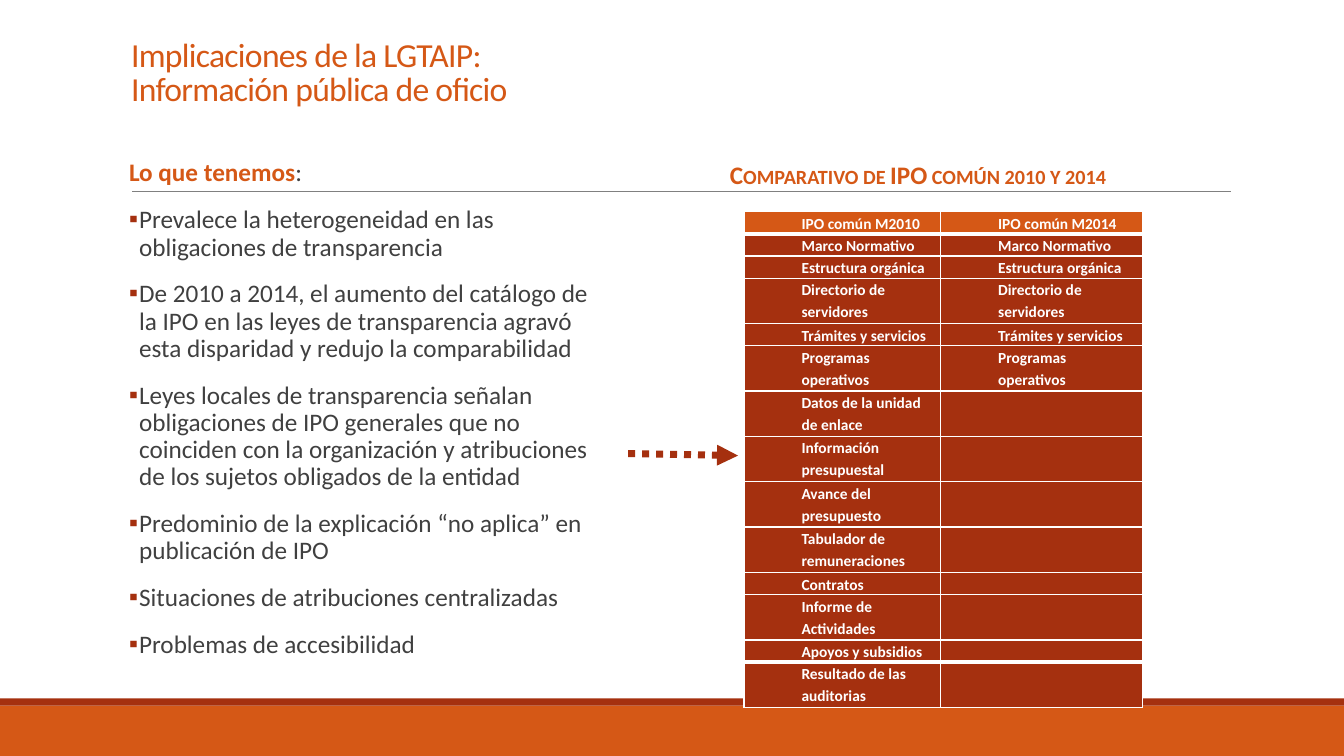
from dataclasses import dataclass
from lxml import etree
from pptx import Presentation
from pptx.dml.color import RGBColor as RGB
from pptx.enum.dml import MSO_LINE
from pptx.enum.shapes import MSO_CONNECTOR as CONN, MSO_SHAPE as SHAPE
from pptx.enum.text import MSO_ANCHOR as ANCHOR, PP_ALIGN as ALIGN
from pptx.oxml.ns import qn
from pptx.util import Inches, Pt


@dataclass(frozen=True)
class Theme:
    font: str = "Calibri"
    orange: str = "D55816"
    rust: str = "A5300F"
    ink: str = "404040"
    rule: str = "808080"
    white: str = "FFFFFF"
    title: int = 24
    body: int = 18
    cell: int = 11


T = Theme()

BULLETS = [
    "Prevalece la heterogeneidad en las obligaciones de transparencia",
    "De 2010 a 2014, el aumento del catálogo de la IPO en las leyes de "
    "transparencia agravó esta disparidad y redujo la comparabilidad",
    "Leyes locales de transparencia señalan obligaciones de IPO generales que no "
    "coinciden con la organización y atribuciones de los sujetos obligados de la entidad",
    "Predominio de la explicación “no aplica” en publicación de IPO",
    "Situaciones de atribuciones centralizadas",
    "Problemas de accesibilidad",
]

# Each obligation: name, lines it takes, present in 2014
OBLIGATIONS = [
    ("Marco Normativo", 1, True),
    ("Estructura orgánica", 1, True),
    ("Directorio de servidores", 2, True),
    ("Trámites y servicios", 1, True),
    ("Programas operativos", 2, True),
    ("Datos de la unidad de enlace", 2, False),
    ("Información presupuestal", 2, False),
    ("Avance del presupuesto", 2, False),
    ("Tabulador de remuneraciones", 2, False),
    ("Contratos", 1, False),
    ("Informe de Actividades", 2, False),
    ("Apoyos y subsidios", 1, False),
    ("Resultado de las auditorias", 2, False),
]
ROW_HEIGHT = {1: 0.22, 2: 0.45}


def inches(*values):
    return [Inches(v) for v in values]


def apply(obj, **values):
    for name, value in values.items():
        setattr(obj, name, value)


def style_run(r, size, color, bold=False, **attrs):
    apply(r.font, name=T.font, size=Pt(size), bold=bold)
    r.font.color.rgb = RGB.from_string(color)
    for name, value in attrs.items():
        r._r.get_or_add_rPr().set(name, value)


def add_run(p, text, *args, **attrs):
    r = p.add_run()
    r.text = text
    style_run(r, *args, **attrs)


def add_band(s, box, color):
    sp = s.shapes.add_shape(SHAPE.RECTANGLE, *inches(*box))
    sp.shadow.inherit = False
    sp.fill.solid()
    sp.fill.fore_color.rgb = RGB.from_string(color)
    sp.line.fill.background()


def add_line(s, ends, color, width, dash=None, arrow=False):
    cx = s.shapes.add_connector(CONN.STRAIGHT, *inches(*ends))
    cx.line.color.rgb = RGB.from_string(color)
    cx.line.width = Pt(width)
    if dash:
        cx.line.dash_style = dash
    if arrow:
        etree.SubElement(cx.line._get_or_add_ln(), qn("a:tailEnd"), type="triangle")
    etree.SubElement(cx._element.spPr, qn("a:effectLst"))


def add_title(s, text):
    sp = s.shapes.title
    apply(sp, **dict(zip(("left", "top", "width", "height"), inches(1.2, 0.31, 11, 0.82))))
    tf = sp.text_frame
    apply(tf, text=text, vertical_anchor=ANCHOR.BOTTOM, word_wrap=True)
    p = tf.paragraphs[0]
    apply(p, alignment=ALIGN.LEFT, line_spacing=0.85)
    for r in p.runs:
        style_run(r, T.title, T.orange, spc="-50")


def add_bullet(p):
    pPr = p._p.get_or_add_pPr()
    pPr.set("marL", str(Inches(0.1)))
    pPr.set("indent", str(-Inches(0.1)))
    color = etree.SubElement(pPr, qn("a:buClr"))
    etree.SubElement(color, qn("a:srgbClr"), val=T.rust)
    etree.SubElement(pPr, qn("a:buFont"), typeface=T.font)
    etree.SubElement(pPr, qn("a:buChar"), char="▪")


def add_findings(s):
    tf = s.shapes.add_textbox(*inches(1.28, 1.54, 4.66, 5.03)).text_frame
    apply(tf, word_wrap=True, margin_left=0, margin_right=0)
    spacing = dict(line_spacing=0.9, space_before=Pt(12), space_after=Pt(2))
    p = tf.paragraphs[0]
    apply(p, **spacing)
    add_run(p, "Lo que tenemos", T.body, T.orange, True)
    add_run(p, ":", T.body, T.ink)
    for text in BULLETS:
        p = tf.add_paragraph()
        apply(p, **spacing)
        add_bullet(p)
        add_run(p, text, T.body, T.ink)


def add_table_heading(s, text):
    tf = s.shapes.add_textbox(*inches(7.14, 1.53, 4.32, 0.4)).text_frame
    tf.word_wrap = False
    add_run(tf.paragraphs[0], text, T.body, T.orange, True, cap="small")


def set_borders(cell, top, bottom):
    tcPr = cell._tc.get_or_add_tcPr()
    for side, width in (("L", 1), ("R", 1), ("T", top), ("B", bottom)):
        ln = etree.SubElement(tcPr, qn(f"a:ln{side}"), w=str(Pt(width)))
        fill = etree.SubElement(ln, qn("a:solidFill"))
        etree.SubElement(fill, qn("a:srgbClr"), val=T.white)


def fill_cell(cell, text, color, top, bottom, align):
    set_borders(cell, top, bottom)
    cell.fill.solid()
    cell.fill.fore_color.rgb = RGB.from_string(color)
    apply(cell, margin_left=Inches(0.07), margin_right=Inches(0.07),
          margin_top=0, margin_bottom=0)
    p = cell.text_frame.paragraphs[0]
    apply(p, line_spacing=1.15, alignment=align)
    p._p.get_or_add_pPr().set("marL", str(Inches(0.5)))
    if text:
        add_run(p, text, T.cell, T.white, True)
    else:
        p._p.get_or_add_endParaRPr().set("sz", str(T.cell * 100))


def add_comparison(s):
    rows = [("IPO común M2010", "IPO común M2014")]
    rows += [(name, name if kept else "") for name, _, kept in OBLIGATIONS]
    heights = [ROW_HEIGHT[n] for n in [1] + [lines for _, lines, _ in OBLIGATIONS]]
    box = inches(7.38, 2.1, 3.95, sum(heights))
    table = s.shapes.add_table(len(rows), 2, *box).table
    apply(table, horz_banding=False)
    for column, width in zip(table.columns, (1.95, 2)):
        column.width = Inches(width)
    last = len(rows) - 1
    for i, (texts, height) in enumerate(zip(rows, heights)):
        table.rows[i].height = Inches(height)
        # Thick rules below the header and above the last row
        top = 3 if i in (1, last) else 1
        bottom = 3 if i in (0, last - 1) else 1
        color, align = (T.rust, ALIGN.LEFT) if i else (T.orange, ALIGN.JUSTIFY)
        for j, text in enumerate(texts):
            fill_cell(table.cell(i, j), text, color, top, bottom, align)


def main():
    prs = Presentation()
    apply(prs, slide_width=Inches(13.33), slide_height=Inches(7.5))
    s = prs.slides.add_slide(prs.slide_layouts[5])

    # Footer bands and heading rule
    add_band(s, (0, 7, 13.33, 0.5), T.orange)
    add_band(s, (0, 6.93, 13.33, 0.07), T.rust)
    add_line(s, (1.31, 1.9, 12.21, 1.9), T.rule, 0.5)

    # Title and findings
    add_title(s, "Implicaciones de la LGTAIP:\vInformación pública de oficio")
    add_findings(s)

    # Comparison and the arrow leading to it
    add_comparison(s)
    add_table_heading(s, "Comparativo de IPO común 2010 y 2014")
    add_line(s, (6.23, 4.5, 7.32, 4.52), T.rust, 5, MSO_LINE.ROUND_DOT, arrow=True)
    prs.save("out.pptx")


if __name__ == "__main__":
    main()
